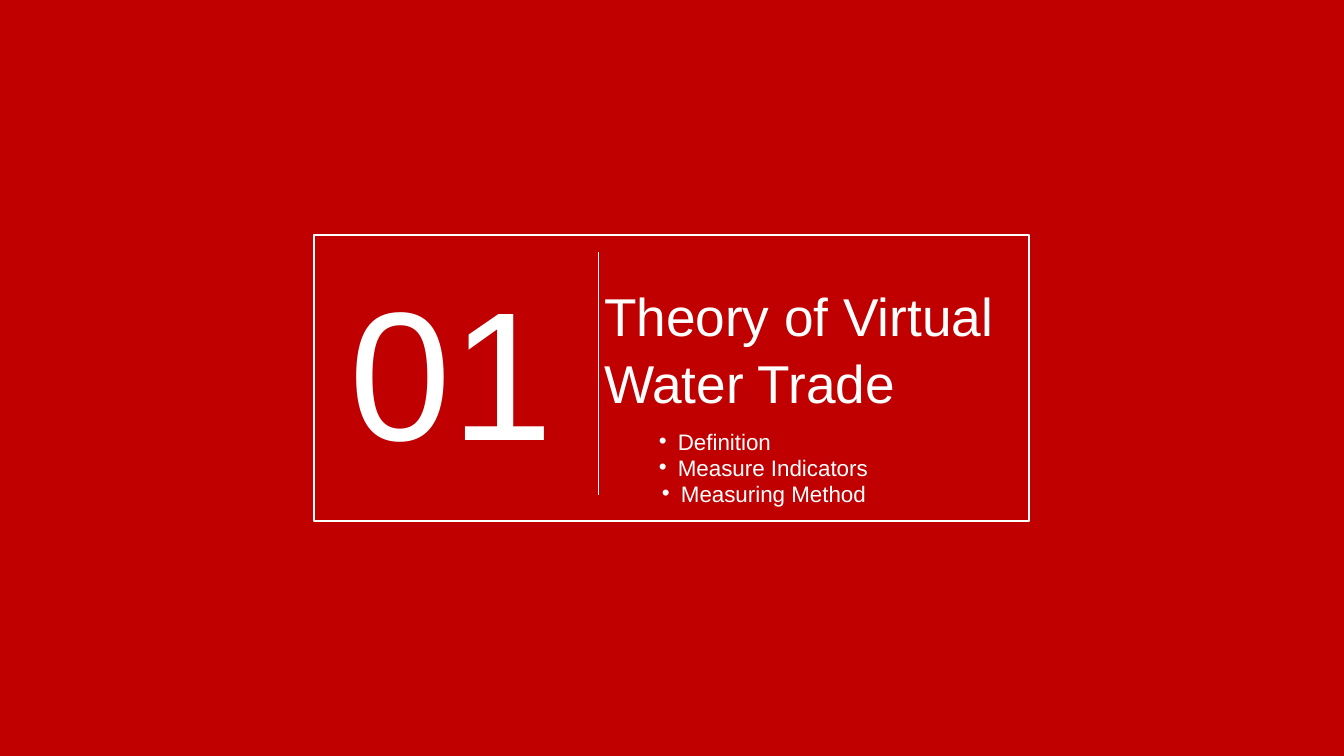
from dataclasses import dataclass
from typing import Any

from lxml import etree
from pptx import Presentation
from pptx import util as u
from pptx.dml.color import RGBColor
from pptx.enum import shapes, text
from pptx.oxml.ns import qn

SCALE = 914400 / 100.8


@dataclass(frozen=True)
class Theme:
    red: RGBColor = RGBColor(0xC0, 0x00, 0x00)
    white: RGBColor = RGBColor(0xFF, 0xFF, 0xFF)
    font: str = "Arial"
    number_size: float = 130.8
    title_size: float = 38
    bullet_size: float = 16
    frame_weight: float = 1
    divider_weight: float = 0.5


@dataclass(frozen=True)
class Box:
    left: int
    top: int
    width: int
    height: int

    def emu(self) -> list[int]:
        return [px(n) for n in (self.left, self.top, self.width, self.height)]


@dataclass(frozen=True)
class Label:
    words: str
    box: Box
    size: float
    paragraph_format: dict[str, Any]
    inset: bool = False
    wrap: bool = True
    bullet: bool = False


THEME = Theme()
SLIDE = Box(0, 0, 1344, 756)
FRAME = Box(314, 235, 715, 286)
DIVIDER = Box(598, 252, 0, 243)
BULLET_INDENT = 19

HEADINGS = [
    Label("01", Box(327, 257, 249, 222), THEME.number_size,
          {"alignment": text.PP_ALIGN.CENTER, "space_before": u.Pt(11.5)}),
    Label("Theory of Virtual Water Trade", Box(604, 280, 436, 129),
          THEME.title_size, {"line_spacing": 1.05}),
]
TOPICS = [
    Label(words, Box(left, 423 + 26 * row, width, 37), THEME.bullet_size,
          {"level": 1}, inset=True, wrap=wrap, bullet=True)
    for row, (words, left, width, wrap) in enumerate([
        ("Definition", 649, 132, False),
        ("Measure Indicators", 649, 230, False),
        ("Measuring Method", 652, 226, True),
    ])
]


def px(length: int) -> int:
    return round(length * SCALE)


def apply(target: Any, values: dict[str, Any]) -> None:
    for name, value in values.items():
        setattr(target, name, value)


def draw_background(slide: Any) -> None:
    shape = slide.shapes.add_shape(shapes.MSO_SHAPE.RECTANGLE, *SLIDE.emu())
    shape.shadow.inherit = False
    shape.fill.solid()
    shape.fill.fore_color.rgb = THEME.red
    shape.line.fill.background()


def draw_frame(slide: Any) -> None:
    shape = slide.shapes.add_shape(shapes.MSO_SHAPE.RECTANGLE, *FRAME.emu())
    shape.shadow.inherit = False
    shape.fill.background()
    shape.line.color.rgb = THEME.white
    shape.line.width = u.Pt(THEME.frame_weight)


def draw_divider(slide: Any) -> None:
    left, top, width, height = DIVIDER.emu()
    connector = slide.shapes.add_connector(
        shapes.MSO_CONNECTOR.STRAIGHT, left, top, left + width, top + height)
    connector.line.color.rgb = THEME.white
    connector.line.width = u.Pt(THEME.divider_weight)
    properties = connector.line._get_or_add_ln().getparent()
    etree.SubElement(properties, qn("a:effectLst"))


def add_bullet(paragraph: Any) -> None:
    properties = paragraph._p.get_or_add_pPr()
    properties.set("marL", str(px(BULLET_INDENT)))
    properties.set("indent", str(-px(BULLET_INDENT)))
    etree.SubElement(properties, qn("a:buFont"), typeface=THEME.font)
    etree.SubElement(properties, qn("a:buChar"), char="•")


def draw_label(slide: Any, label: Label) -> None:
    shape = slide.shapes.add_textbox(*label.box.emu())
    frame = shape.text_frame
    apply(frame, {"word_wrap": label.wrap,
                  "vertical_anchor": text.MSO_ANCHOR.TOP})
    if not label.inset:
        apply(frame, {f"margin_{side}": 0
                      for side in ("left", "top", "right", "bottom")})
    paragraph = frame.paragraphs[0]
    apply(paragraph, label.paragraph_format)
    if label.bullet:
        add_bullet(paragraph)
    run = paragraph.add_run()
    run.text = label.words
    apply(run.font, {"name": THEME.font, "size": u.Pt(label.size)})
    run.font.color.rgb = THEME.white


def main() -> None:
    presentation = Presentation()
    apply(presentation, {"slide_width": px(SLIDE.width),
                         "slide_height": px(SLIDE.height)})
    slide = presentation.slides.add_slide(presentation.slide_layouts[6])
    draw_background(slide)
    draw_frame(slide)
    draw_divider(slide)
    for label in HEADINGS + TOPICS:
        draw_label(slide, label)
    presentation.save("out.pptx")


if __name__ == "__main__":
    main()
